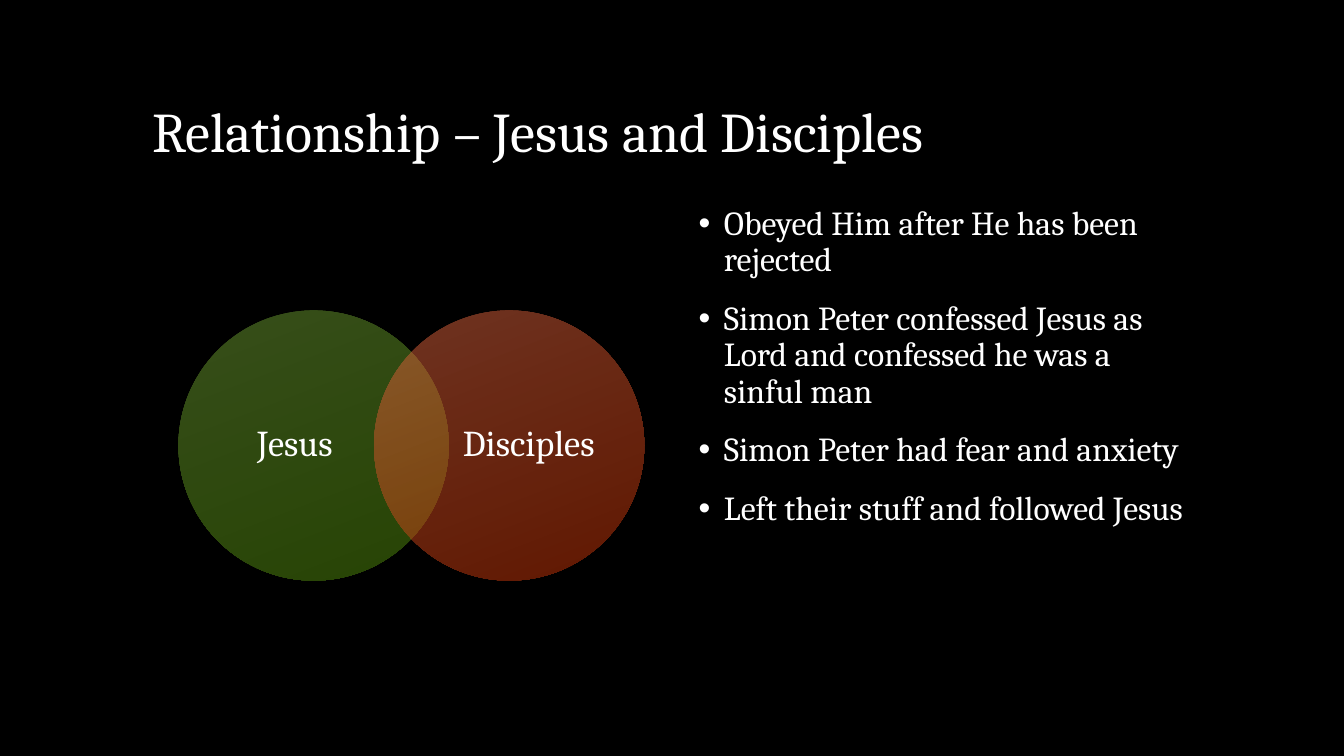
from lxml.etree import SubElement
from pptx import Presentation
from pptx.dml.color import RGBColor
from pptx.enum.shapes import MSO_SHAPE
from pptx.enum.text import MSO_ANCHOR, MSO_AUTO_SIZE, PP_ALIGN
from pptx.oxml.ns import qn
from pptx.util import Inches, Pt

FONT = "Cambria"
WHITE = "FFFFFF"
CIRCLE_SIZE = 2.68
CIRCLE_TOP = 3.08
BULLETS = [
    "Obeyed Him after He has been rejected",
    "Simon Peter confessed Jesus as Lord and confessed he was a sinful man",
    "Simon Peter had fear and anxiety",
    "Left their stuff and followed Jesus",
]
CIRCLES = [
    ("Jesus", 1.77, 2.15, "6E9D35", "4E8808"),
    ("Disciples", 3.71, 4.47, "DE6742", "C23002"),
]


def color(value):
    return RGBColor.from_string(value)


def set_all(target, values):
    for name, value in values.items():
        setattr(target, name, value)


def place(shape, left, top, width, height):
    set_all(shape, {
        "left": Inches(left), "top": Inches(top),
        "width": Inches(width), "height": Inches(height),
    })


def format_frame(frame, anchor):
    set_all(frame, {
        "word_wrap": True,
        "auto_size": MSO_AUTO_SIZE.NONE,
        "vertical_anchor": anchor,
    })


def write(para, text, size, spacing, align=PP_ALIGN.LEFT, before=0):
    set_all(para, {
        "alignment": align, "line_spacing": spacing,
        "space_before": Pt(before), "space_after": Pt(0),
    })
    span = para.add_run()
    span.text = text
    set_all(span.font, {"name": FONT, "size": Pt(size)})
    span.font.color.rgb = color(WHITE)


def add_bullet(para):
    properties = para._p.get_or_add_pPr()
    properties.set("marL", str(Inches(0.25)))
    properties.set("indent", str(-Inches(0.25)))
    SubElement(properties, qn("a:buFont")).set("typeface", "Arial")
    SubElement(properties, qn("a:buChar")).set("char", "•")


def add_title(page, text):
    title = page.shapes.title
    place(title, 1.41, 0.42, 10.5, 1.25)
    format_frame(title.text_frame, MSO_ANCHOR.BOTTOM)
    write(title.text_frame.paragraphs[0], text, 40, 0.8)


def add_list(page, items):
    body = page.placeholders[1]
    place(body, 6.83, 2, 5.08, 4.75)
    frame = body.text_frame
    format_frame(frame, MSO_ANCHOR.TOP)
    for index, item in enumerate(items):
        para = frame.add_paragraph() if index else frame.paragraphs[0]
        add_bullet(para)
        write(para, item, 24, 0.9, before=16 if index else 0)


def add_circle(page, left, start, end):
    circle = page.shapes.add_shape(
        MSO_SHAPE.OVAL, Inches(left), Inches(CIRCLE_TOP),
        Inches(CIRCLE_SIZE), Inches(CIRCLE_SIZE))
    circle.shadow.inherit = False
    circle.line.fill.background()
    circle.fill.gradient()
    circle.fill.gradient_angle = 360 - 69
    for stop, value in zip(circle.fill.gradient_stops, (start, end)):
        stop.color.rgb = color(value)
    for shade in circle._element.spPr.iter(qn("a:srgbClr")):
        SubElement(shade, qn("a:alpha")).set("val", "50000")


def add_label(page, text, left):
    box = page.shapes.add_textbox(
        Inches(left), Inches(3.39), Inches(1.55), Inches(2.05))
    frame = box.text_frame
    format_frame(frame, MSO_ANCHOR.MIDDLE)
    set_all(frame, {
        "margin_left": 0, "margin_right": 0,
        "margin_top": 0, "margin_bottom": 0,
    })
    write(frame.paragraphs[0], text, 26, 0.9, PP_ALIGN.CENTER)


def main():
    deck = Presentation()
    set_all(deck, {"slide_width": Inches(13.33), "slide_height": Inches(7.5)})
    page = deck.slides.add_slide(deck.slide_layouts[1])
    page.background.fill.solid()
    page.background.fill.fore_color.rgb = color("000000")
    add_title(page, "Relationship – Jesus and Disciples")
    for text, circle_left, label_left, start, end in CIRCLES:
        add_circle(page, circle_left, start, end)
        add_label(page, text, label_left)
    add_list(page, BULLETS)
    deck.save("out.pptx")


if __name__ == "__main__":
    main()
